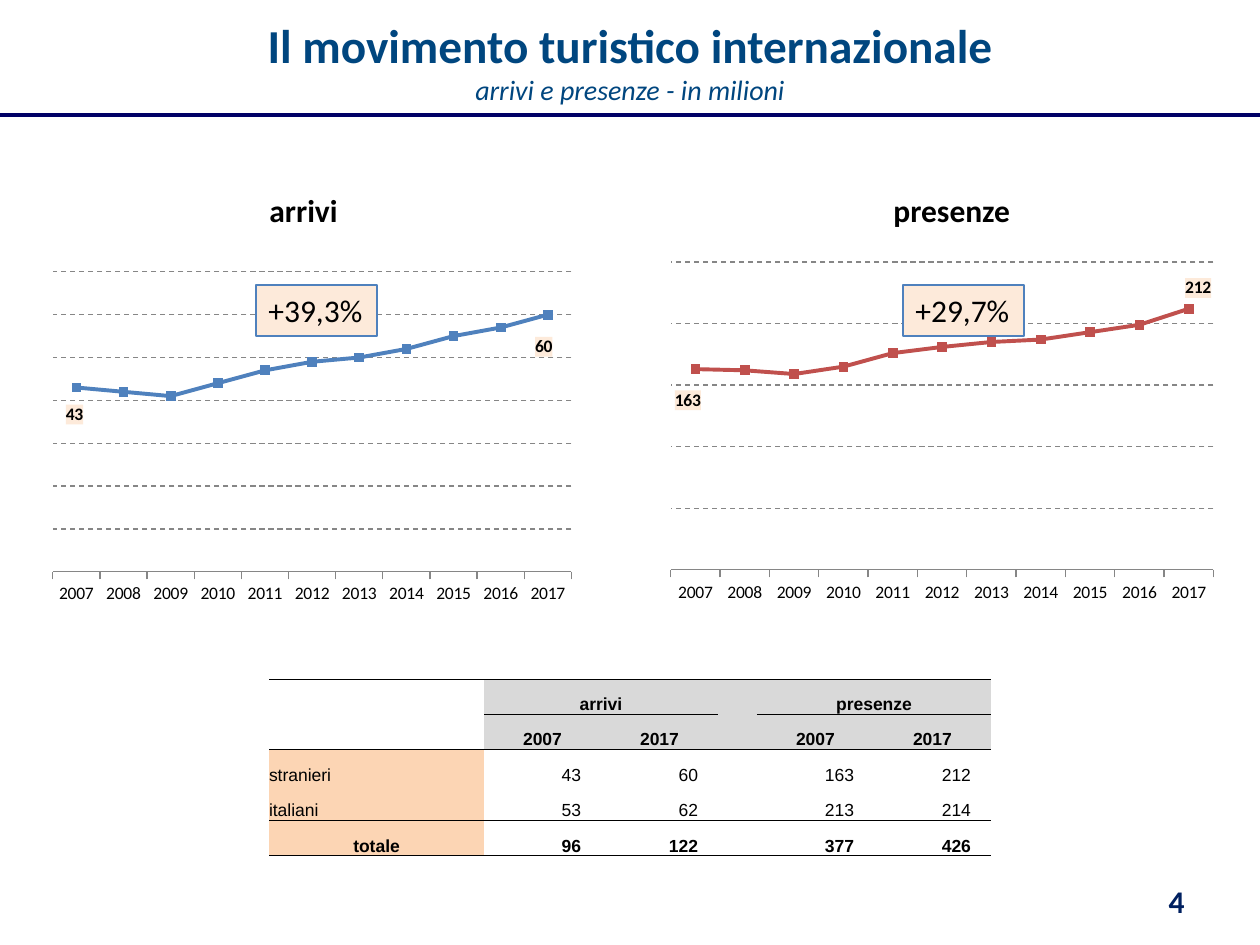
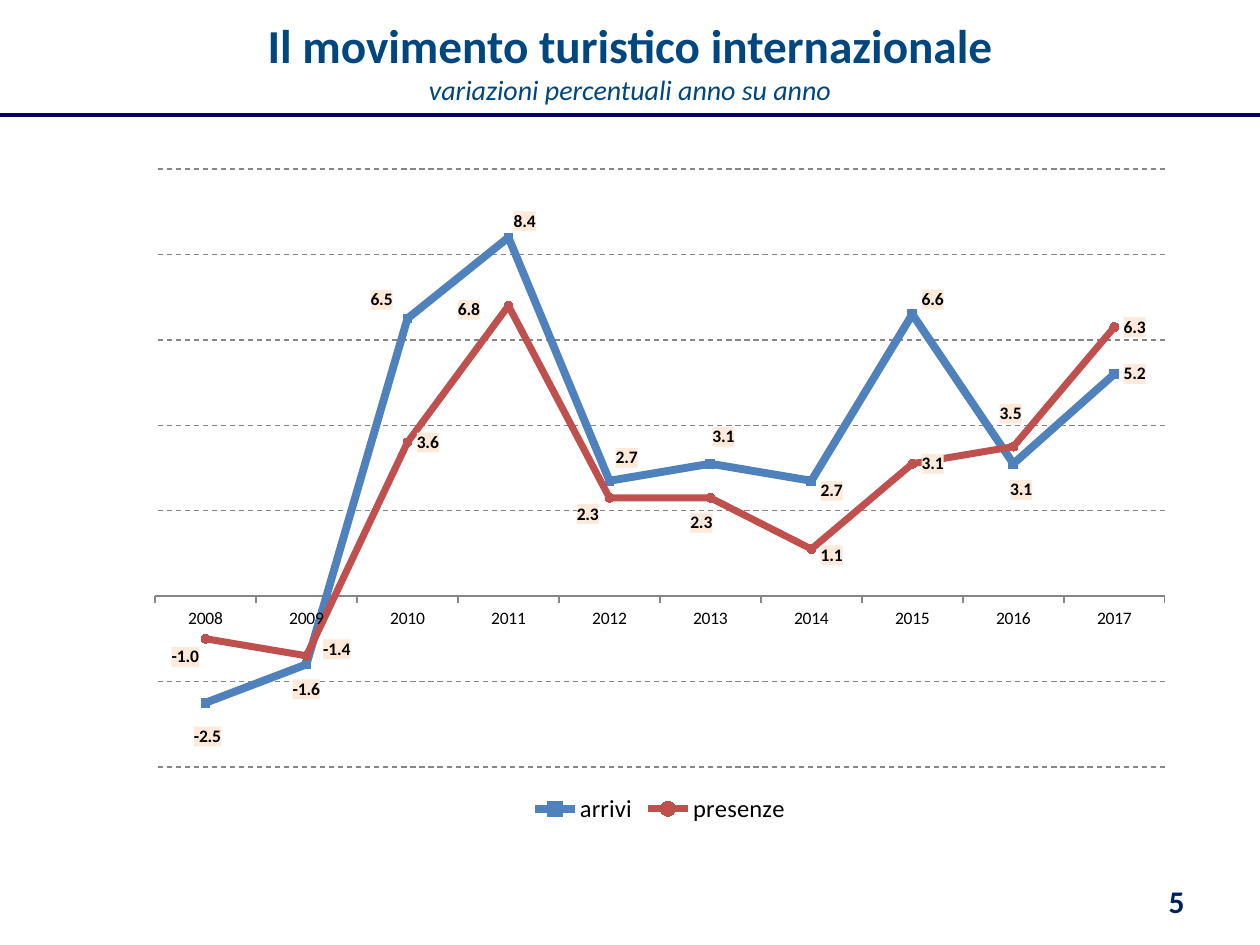
from lxml import etree
from pptx import Presentation
from pptx.chart.data import CategoryChartData
from pptx.dml.color import RGBColor
from pptx.enum.chart import XL_CHART_TYPE, XL_LEGEND_POSITION, XL_MARKER_STYLE, XL_TICK_MARK
from pptx.enum.chart import XL_LABEL_POSITION as LabelPosition
from pptx.enum.dml import MSO_LINE
from pptx.enum.shapes import MSO_CONNECTOR, MSO_SHAPE
from pptx.enum.text import MSO_ANCHOR as Anchor, MSO_AUTO_SIZE as AutoSize, PP_ALIGN as Align
from pptx.oxml import parse_xml
from pptx.oxml.ns import nsdecls, qn
from pptx.util import Emu, Pt

BLACK = RGBColor(0x00, 0x00, 0x00)
TITLE_BLUE = RGBColor(0x00, 0x46, 0x7F)
RULE_BLUE = RGBColor(0x00, 0x00, 0x66)
NUMBER_BLUE = RGBColor(0x00, 0x20, 0x60)
ARRIVALS_BLUE = RGBColor(0x4F, 0x81, 0xBD)
STAYS_RED = RGBColor(0xC0, 0x50, 0x4D)
CREAM = RGBColor(0xFD, 0xEA, 0xDA)
PEACH = RGBColor(0xFC, 0xD5, 0xB4)
HEADER_GREY = RGBColor(0xD9, 0xD9, 0xD9)
GRID_GREY = RGBColor(0x86, 0x86, 0x86)
FONT = "Calibri"
NO_STYLE = "{2D5ABB26-0587-4C30-8999-92F81FD0307C}"
NO_LEADER_LINES = (
    f'<c:extLst {nsdecls("c")}><c:ext uri="{{CE6537A1-D6FC-4f65-9D91-7224C49458BB}}" '
    'xmlns:c15="http://schemas.microsoft.com/office/drawing/2012/chart">'
    '<c15:showLeaderLines val="0"/></c:ext></c:extLst>')


def px(*lengths):
    """Turn pixels, 126 to the inch, into a list of EMU lengths."""
    return [Emu(round(length * 914400 / 126)) for length in lengths]


def add_line_chart(slide, frame, plot_area, years, scale, number_format, lines):
    """Each line is name, values, colour, width, marker and label shifts.

    Label shifts are pixels away from the place right of the point, by point index.
    """
    data = CategoryChartData(number_format=number_format)
    data.categories = [str(year) for year in years]
    for name, values, *_ in lines:
        data.add_series(name, values)
    chart = slide.shapes.add_chart(XL_CHART_TYPE.LINE_MARKERS, *px(*frame), data).chart
    chart.has_title = chart.has_legend = False
    chart.font.name, chart.font.size = FONT, Pt(10)
    chart.font.color.rgb = BLACK

    left, top, width, height = frame
    fractions = {
        "x": (plot_area[0] - left) / width, "y": (plot_area[1] - top) / height,
        "w": plot_area[2] / width, "h": plot_area[3] / height}
    sizes = "".join(f'<c:{key} val="{value:.3f}"/>' for key, value in fractions.items())
    plot_element = chart._chartSpace.find(".//" + qn("c:plotArea"))
    for layout in plot_element.findall(qn("c:layout")):
        plot_element.remove(layout)
    plot_element.insert(0, parse_xml(
        f'<c:layout {nsdecls("c")}><c:manualLayout><c:layoutTarget val="inner"/>'
        f'<c:xMode val="edge"/><c:yMode val="edge"/>{sizes}</c:manualLayout></c:layout>'))

    value_axis, category_axis = chart.value_axis, chart.category_axis
    value_axis.minimum_scale, value_axis.maximum_scale, value_axis.major_unit = scale
    value_axis.visible = False
    value_axis.has_major_gridlines = True
    category_axis.major_tick_mark = XL_TICK_MARK.OUTSIDE
    grid_line = value_axis.major_gridlines.format.line
    grid_line.dash_style = MSO_LINE.DASH
    for line in (grid_line, category_axis.format.line):
        line.color.rgb, line.width = GRID_GREY, Pt(0.75)

    for series, (_, _, colour, line_width, marker, shifts) in zip(chart.plots[0].series, lines):
        series.smooth = False
        series.format.line.color.rgb, series.format.line.width = colour, Pt(line_width)
        series.marker.style, series.marker.size = marker, 5
        series.marker.format.fill.solid()
        series.marker.format.fill.fore_color.rgb = colour
        series.marker.format.line.color.rgb = colour
        series.data_labels.show_value = False
        for index in shifts:
            label = series.points[index].data_label
            label.font.size, label.font.bold, label.font.name = Pt(10), True, FONT
            label.font.color.rgb = BLACK
            label.position = LabelPosition.RIGHT
        for label_element in series._element.iter(qn("c:dLbl")):
            index = label_element.find(qn("c:idx"))
            across, down = shifts[int(index.get("val"))]
            index.addnext(parse_xml(
                f'<c:layout {nsdecls("c")}><c:manualLayout><c:x val="{across / width:.3f}"/>'
                f'<c:y val="{down / height:.3f}"/></c:manualLayout></c:layout>'))
            for old_fill in label_element.findall(qn("c:spPr")):
                label_element.remove(old_fill)
            label_element.find(qn("c:txPr")).addprevious(parse_xml(
                f'<c:spPr {nsdecls("c", "a")}><a:solidFill><a:srgbClr val="{CREAM}"/>'
                '</a:solidFill></c:spPr>'))
        labels_element = series._element.find(qn("c:dLbls"))
        for leader in labels_element.findall(qn("c:showLeaderLines")):
            labels_element.remove(leader)
        etree.SubElement(labels_element, qn("c:showLeaderLines")).set("val", "0")
        labels_element.append(parse_xml(NO_LEADER_LINES))
    return chart


presentation = Presentation()
presentation.slide_width, presentation.slide_height = px(1260, 945)
slides = [presentation.slides.add_slide(presentation.slide_layouts[6]) for _ in range(2)]
totals_slide, changes_slide = slides

# Title, rule and page number on both slides
subtitles = ["arrivi e presenze - in milioni", "variazioni percentuali anno su anno"]
for number, (slide, subtitle) in enumerate(zip(slides, subtitles), start=4):
    frame = slide.shapes.add_textbox(*px(94, 6, 1072, 110)).text_frame
    frame.word_wrap, frame.vertical_anchor = True, Anchor.MIDDLE
    paragraph = frame.paragraphs[0]
    paragraph.alignment = Align.CENTER
    paragraph.font.name, paragraph.font.color.rgb = FONT, TITLE_BLUE
    title_run = paragraph.add_run()
    title_run.text = "Il movimento turistico internazionale"
    title_run.font.size, title_run.font.bold = Pt(27), True
    paragraph.add_line_break()
    subtitle_run = paragraph.add_run()
    subtitle_run.text = subtitle
    subtitle_run.font.size, subtitle_run.font.italic = Pt(16), True

    rule = slide.shapes.add_connector(MSO_CONNECTOR.STRAIGHT, *px(0, 115, 1260, 115))
    rule.line.color.rgb, rule.line.width = RULE_BLUE, Pt(2.5)
    etree.SubElement(rule._element.spPr, qn("a:effectLst"))

    frame = slide.shapes.add_textbox(*px(903, 876, 294, 50)).text_frame
    frame.word_wrap, frame.vertical_anchor = True, Anchor.MIDDLE
    paragraph = frame.paragraphs[0]
    paragraph.text, paragraph.alignment = str(number), Align.RIGHT
    paragraph.font.name, paragraph.font.size, paragraph.font.bold = FONT, Pt(18), True
    paragraph.font.color.rgb = NUMBER_BLUE

# Totals: two charts, each with heading and growth box
SQUARE, CIRCLE = XL_MARKER_STYLE.SQUARE, XL_MARKER_STYLE.CIRCLE
arrivals = [43, 42, 41, 44, 47, 49, 50, 52, 55, 57, 60]
stays = [163, 162, 159, 165, 176, 181, 185, 187, 193, 199, 212]
add_line_chart(
    totals_slide, (660, 256, 566, 354), (671, 262, 543, 308), range(2007, 2018), (0, 250, 50), "0",
    [("presenze", stays, STAYS_RED, 2.25, SQUARE, {0: (-30, 31), 10: (-13, -21)})])
add_line_chart(
    totals_slide, (35, 246, 556, 359), (53, 272, 519, 300), range(2007, 2018), (0, 70, 10), "0",
    [("arrivi", arrivals, ARRIVALS_BLUE, 2.25, SQUARE, {0: (-20, 27), 10: (-22, 32)})])

for text, box, is_heading in [
        ("arrivi", (257, 185, 94, 50), True), ("presenze", (881, 185, 143, 50), True),
        ("+39,3%", (256, 285, 121, 51), False), ("+29,7%", (903, 285, 121, 51), False)]:
    if is_heading:
        shape = totals_slide.shapes.add_textbox(*px(*box))
    else:
        shape = totals_slide.shapes.add_shape(MSO_SHAPE.RECTANGLE, *px(*box))
        shape.shadow.inherit = False
        shape.fill.solid()
        shape.fill.fore_color.rgb = CREAM
        shape.line.color.rgb, shape.line.width = ARRIVALS_BLUE, Pt(0.75)
    shape.text_frame.word_wrap = False
    shape.text_frame.auto_size = AutoSize.SHAPE_TO_FIT_TEXT
    shape.text_frame.vertical_anchor = Anchor.TOP
    paragraph = shape.text_frame.paragraphs[0]
    paragraph.text, paragraph.alignment = text, Align.LEFT
    paragraph.font.name, paragraph.font.size, paragraph.font.bold = FONT, Pt(18), is_heading
    paragraph.font.color.rgb = BLACK

# Totals: table of foreign and domestic visitors
rows = [
    ["", "arrivi", "", "", "presenze", ""],
    ["", "2007", "2017", "", "2007", "2017"],
    ["stranieri", "43", "60", "", "163", "212"],
    ["italiani", "53", "62", "", "213", "214"],
    ["totale", "96", "122", "", "377", "426"]]
table = totals_slide.shapes.add_table(5, 6, *px(269, 679, 722, 177)).table
table.first_row = table.horz_banding = False
table._tbl.tblPr.find(qn("a:tableStyleId")).text = NO_STYLE
for column, width in zip(table.columns, px(215, 117, 117, 39, 117, 117)):
    column.width = width
for first_column in (1, 4):
    table.cell(0, first_column).merge(table.cell(0, first_column + 1))
for row_index, row in enumerate(rows):
    for column_index, text in enumerate(row):
        cell = table.cell(row_index, column_index)
        is_header, is_label = row_index < 2, column_index == 0
        is_total = row_index == 4
        is_number = not is_header and not is_label
        cell.margin_left = cell.margin_top = cell.margin_bottom = 0
        cell.margin_right = px(20 if is_number else 0)[0]
        cell.vertical_anchor = Anchor.BOTTOM
        paragraph = cell.text_frame.paragraphs[0]
        paragraph.text = text
        paragraph.font.name, paragraph.font.size = "Arial", Pt(10)
        paragraph.font.bold = is_header or is_total
        paragraph.font.color.rgb = BLACK
        if is_number:
            paragraph.alignment = Align.RIGHT
        else:
            paragraph.alignment = Align.CENTER if is_header or is_total else Align.LEFT
        if is_header != is_label:
            cell.fill.solid()
            cell.fill.fore_color.rgb = HEADER_GREY if is_header else PEACH
        else:
            cell.fill.background()
        for tag, boundary in (("lnB", row_index + 1), ("lnT", row_index)):
            is_ruled = boundary in (0, 2, 4, 5) or boundary == 1 and column_index not in (0, 3)
            ink = f'<a:solidFill><a:srgbClr val="{BLACK}"/></a:solidFill>'
            cell._tc.get_or_add_tcPr().insert(0, parse_xml(
                f'<a:{tag} {nsdecls("a")} w="6350">{ink if is_ruled else "<a:noFill/>"}</a:{tag}>'))

# Year-on-year changes
arrival_changes = [-2.5, -1.6, 6.5, 8.4, 2.7, 3.1, 2.7, 6.6, 3.1, 5.2]
stay_changes = [-1.0, -1.4, 3.6, 6.8, 2.3, 2.3, 1.1, 3.1, 3.5, 6.3]
arrival_shifts = [(-21, 34), (-23, 25), (-46, -19), (-4, -16), (-3, -23),
                  (-7, -27), (0, 10), (0, -15), (-13, 26), (0, 0)]
stay_shifts = [(-43, 18), (7, -7), (0, 0), (-60, 4), (-42, 16),
               (-29, 25), (0, 6), (0, 0), (-23, -33), (0, 0)]
changes_chart = add_line_chart(
    changes_slide, (134, 155, 1052, 674), (155, 169, 1010, 598), range(2008, 2018),
    (-4, 10, 2), "0.0",
    [("arrivi", arrival_changes, ARRIVALS_BLUE, 4.5, SQUARE, dict(enumerate(arrival_shifts))),
     ("presenze", stay_changes, STAYS_RED, 4, CIRCLE, dict(enumerate(stay_shifts)))])
changes_chart.has_legend = True
legend = changes_chart.legend
legend.position, legend.include_in_layout = XL_LEGEND_POSITION.BOTTOM, False
legend.font.name, legend.font.size = FONT, Pt(14)
legend.font.color.rgb = BLACK

presentation.save("out.pptx")
